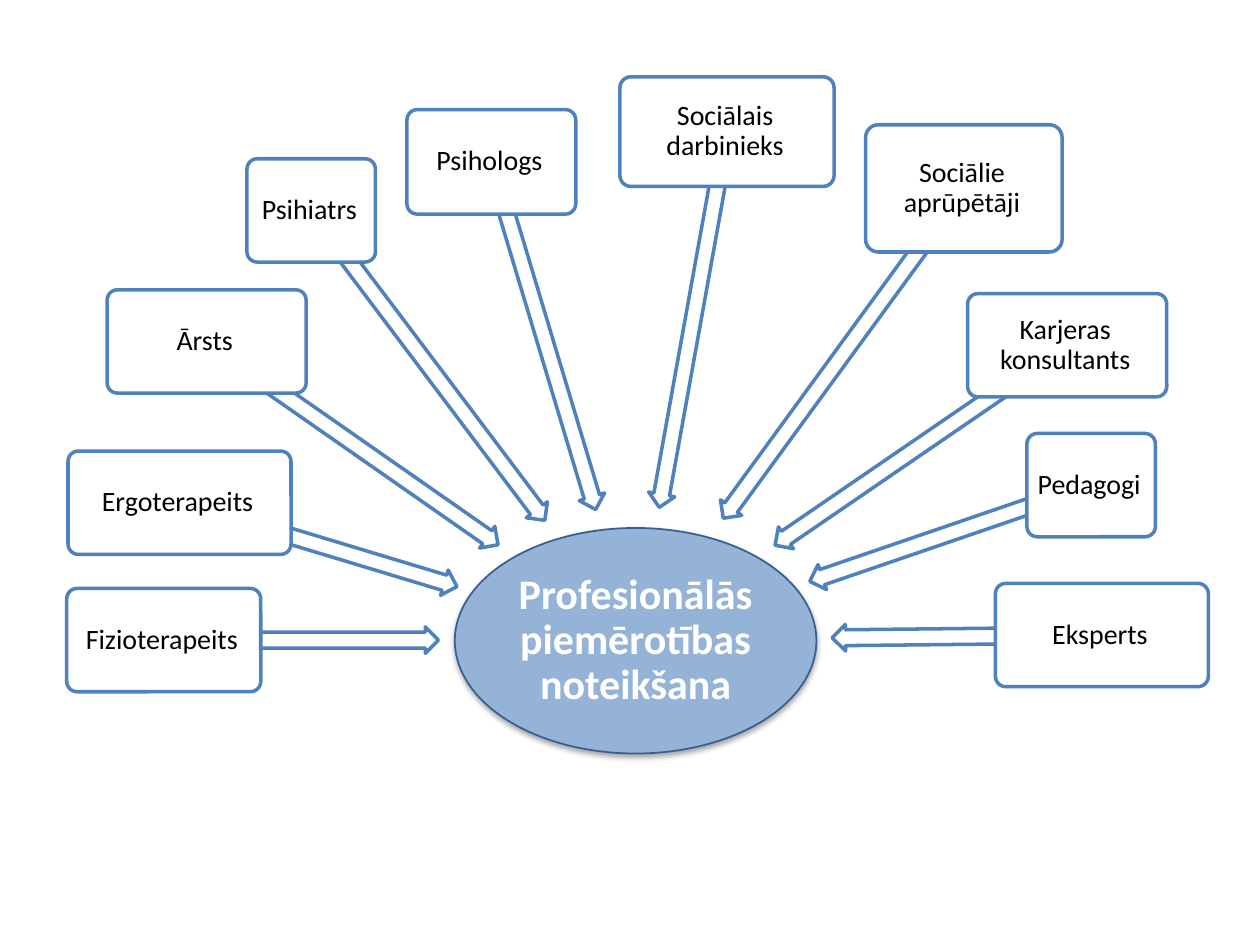
from dataclasses import dataclass
from math import cos, radians, sin

from lxml import etree
from pptx import Presentation
from pptx.dml.color import RGBColor
from pptx.enum.shapes import MSO_SHAPE
from pptx.enum.text import MSO_ANCHOR, PP_ALIGN
from pptx.oxml.ns import qn
from pptx.shapes.autoshape import Shape
from pptx.shapes.shapetree import SlideShapes
from pptx.util import Emu, Pt

ARROW = MSO_SHAPE.LEFT_ARROW
ROUND = MSO_SHAPE.ROUNDED_RECTANGLE
OVAL = MSO_SHAPE.OVAL
MIDDLE = MSO_ANCHOR.MIDDLE
CENTER = PP_ALIGN.CENTER

SCALE = 9144  # 100 px to the inch
THICK = 21  # arrow height in px


@dataclass(frozen=True)
class Theme:
    font: str = "Calibri"
    paper: str = "FFFFFF"
    ink: str = "000000"
    edge: str = "4F81BD"
    hub: str = "95B3D7"
    rim: str = "376092"
    shade: str = "000000"
    small: int = 16
    large: int = 24


@dataclass(frozen=True)
class Role:
    """A labelled box, with the length and turn of its arrow."""
    name: str
    left: int
    top: int
    width: int
    height: int
    reach: int
    turn: float


THEME = Theme()
ROLES = (
    Role("Fizioterapeits", 53, 467, 154, 82, 218, 180),
    Role("Ergoterapeits", 54, 358, 177, 82, 230, 196.8),
    Role("Ārsts", 85, 230, 158, 82, 282, 214.9),
    Role("Psihiatrs", 196, 126, 102, 82, 308, 233),
    Role("Psihologs", 323, 87, 134, 83, 288, 253.3),
    Role("Sociālais darbinieks", 492, 61, 170, 87, 303, 280.2),
    Role("Sociālie aprūpētāji", 687, 99, 156, 101, 324, 306.1),
    Role("Pedagogi", 815, 344, 102, 82, 236, 341.1),
    Role("Karjeras konsultants", 768, 233, 158, 82, 281, 325.6),
    Role("Eksperts", 790, 463, 169, 82, 214, 359.4),
)


def px(size: float) -> Emu:
    return Emu(round(size * SCALE))


def add_form(shapes: SlideShapes, kind: MSO_SHAPE, left: float, top: float,
             width: int, height: int, fill: str, line: str, weight: int) -> Shape:
    form = shapes.add_shape(kind, px(left), px(top), px(width), px(height))
    form.shadow.inherit = False
    form.fill.solid()
    form.fill.fore_color.rgb = RGBColor.from_string(fill)
    form.line.color.rgb = RGBColor.from_string(line)
    form.line.width = Pt(weight)
    return form


def set_text(form: Shape, text: str, size: int, color: str, bold: bool,
             left: int, inset: int) -> None:
    frame = form.text_frame
    frame.word_wrap = True
    frame.vertical_anchor = MIDDLE
    frame.margin_left = px(left)
    frame.margin_top = frame.margin_right = frame.margin_bottom = px(inset)
    para = frame.paragraphs[0]
    para.text = text
    para.alignment = CENTER
    para.line_spacing = 0.9
    para.space_after = Pt(0.35 * size)
    para.font.name = THEME.font
    para.font.size = Pt(size)
    para.font.bold = bold
    para.font.color.rgb = RGBColor.from_string(color)


def add_shade(form: Shape) -> None:
    """Put a soft shadow just below the form."""
    effects = form._element.spPr.find(qn("a:effectLst"))
    outer = etree.SubElement(effects, qn("a:outerShdw"), blurRad="40000",
                             dist="23000", dir="5400000", rotWithShape="0")
    color = etree.SubElement(outer, qn("a:srgbClr"), val=THEME.shade)
    etree.SubElement(color, qn("a:alpha"), val="35000")


def add_hub(shapes: SlideShapes) -> None:
    hub = add_form(shapes, OVAL, 361, 419, 287, 179, THEME.hub, THEME.rim, 1)
    add_shade(hub)
    set_text(hub, "Profesionālās piemērotības noteikšana", THEME.large,
             THEME.paper, True, 2, 2)


def add_arrow(shapes: SlideShapes, role: Role) -> None:
    """Run an arrow from the middle of the role's box towards the hub."""
    angle = radians(role.turn)
    half = role.reach / 2
    mid_x = role.left + role.width / 2 - half * cos(angle)
    mid_y = role.top + role.height / 2 - half * sin(angle)
    arrow = add_form(shapes, ARROW, mid_x - half, mid_y - THICK / 2,
                     role.reach, THICK, THEME.paper, THEME.edge, 2)
    arrow.adjustments[0] = 0.6
    arrow.adjustments[1] = 0.5
    arrow.rotation = role.turn


def add_role(shapes: SlideShapes, role: Role) -> None:
    add_arrow(shapes, role)
    box = add_form(shapes, ROUND, role.left, role.top, role.width, role.height,
                   THEME.paper, THEME.edge, 2)
    box.adjustments[0] = 0.1
    set_text(box, role.name, THEME.small, THEME.ink, False, 0, 3)


def main() -> None:
    deck = Presentation()
    deck.slide_width, deck.slide_height = px(1000), px(750)
    shapes = deck.slides.add_slide(deck.slide_layouts[6]).shapes
    add_hub(shapes)
    for role in ROLES:
        add_role(shapes, role)
    deck.save("out.pptx")


if __name__ == "__main__":
    main()
